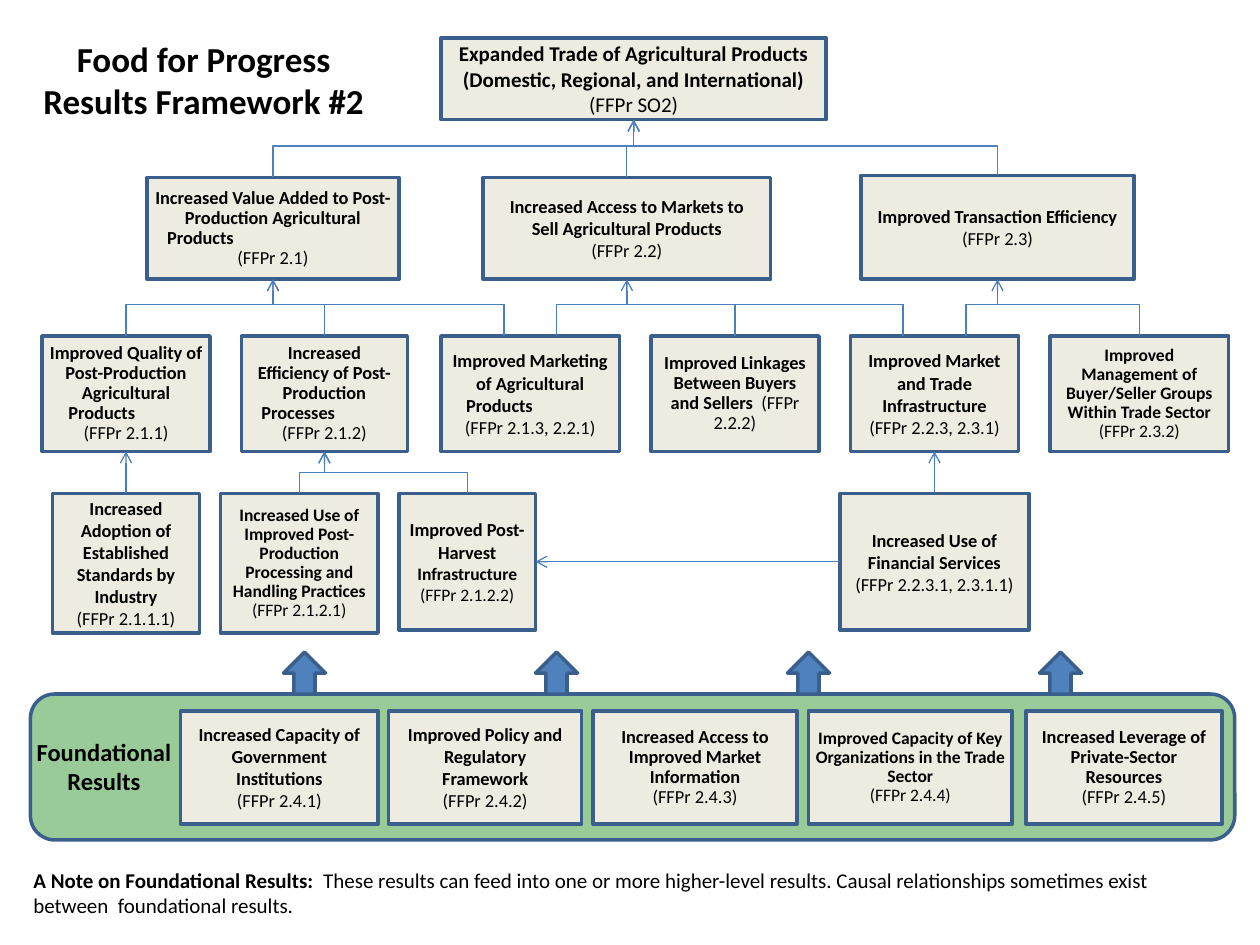
import pptx
import pptx.util
import pptx.dml.color
import pptx.enum.shapes
import pptx.enum.text
import pptx.oxml
import pptx.oxml.ns
from lxml import etree

RGBColor = pptx.dml.color.RGBColor
SHAPE = pptx.enum.shapes.MSO_SHAPE
CONNECTOR = pptx.enum.shapes.MSO_CONNECTOR
ALIGN = pptx.enum.text.PP_ALIGN
ANCHOR = pptx.enum.text.MSO_ANCHOR
qn = pptx.oxml.ns.qn

CREAM = RGBColor(0xEE, 0xEC, 0xE1)
EDGE = RGBColor(0x3A, 0x5F, 0x8C)
BLUE = RGBColor(0x4F, 0x81, 0xBD)
LINK = RGBColor(0x4B, 0x7E, 0xBC)
GREEN = RGBColor(0x33, 0x99, 0x33)
WHITE = RGBColor(0xFF, 0xFF, 0xFF)
BLACK = RGBColor(0, 0, 0)

CELLS_PER_INCH = 12
ROW_2, ROW_3, ROW_4, ROW_BASE = 16.9, 32, 47, 67.7
TOP_BUS, MIDDLE_BUS, LOWER_BUS = 13.9, 29, 45
WIDE, MEDIUM, SIDELESS, THIN = (0.1, 0.05), (0.05, 0.05), (0, 0.05), (0.01, 0.01)

# code: column, row, columns wide, rows high, title, size, line spacing, insets
BOXES = {
    "SO2": (42, 3.6, 36.7, 7.8, "Expanded Trade of Agricultural Products (Domestic, Regional, and International)", 12, 1, WIDE),
    "2.1": (14, ROW_2, 24, 9.7, "Increased Value Added to Post-Production Agricultural", 10.5, 0.9, MEDIUM),
    "2.2": (46, ROW_2, 27.4, 9.7, "Increased Access to Markets to Sell Agricultural Products", 10.5, 1, WIDE),
    "2.3": (82, 16.7, 26, 9.9, "Improved Transaction Efficiency", 10.5, 1, MEDIUM),
    "2.1.1": (4, ROW_3, 16, 11, "Improved Quality of Post-Production Agricultural", 10.5, 0.9, MEDIUM),
    "2.1.2": (23, ROW_3, 15.8, 11, "Increased Efficiency of Post-Production", 10.5, 0.9, WIDE),
    "2.1.3, 2.2.1": (42, ROW_3, 17, 11, "Improved Marketing of Agricultural", 10.5, 1, MEDIUM),
    "2.2.2": (62, ROW_3, 16, 11, "Improved Linkages Between Buyers and Sellers  ", 10.5, 0.9, WIDE),
    "2.2.3, 2.3.1": (81, ROW_3, 16, 11, "Improved Market and Trade Infrastructure", 10.5, 1, WIDE),
    "2.3.2": (100, ROW_3, 17, 11, "Improved Management of Buyer/Seller Groups Within Trade Sector", 10, 0.9, MEDIUM),
    "2.1.1.1": (5, ROW_4, 14, 13.3, "Increased Adoption of Established Standards by Industry", 10.5, 1, MEDIUM),
    "2.1.2.1": (21, ROW_4, 15, 13.3, "Increased Use of Improved Post-Production Processing and Handling Practices", 10, 0.9, THIN),
    "2.1.2.2": (38, ROW_4, 13, 13, "Improved Post-Harvest ", 10.5, 1, SIDELESS),
    "2.2.3.1, 2.3.1.1": (80, ROW_4, 18, 13, "Increased Use of Financial Services", 10.5, 1, MEDIUM),
    "2.4.1": (17.2, ROW_BASE, 18.8, 10.8, "Increased Capacity of Government Institutions", 10.5, 1, WIDE),
    "2.4.2": (37, ROW_BASE, 18.4, 10.8, "Improved Policy and Regulatory Framework", 10.5, 1, WIDE),
    "2.4.3": (56.5, ROW_BASE, 19.4, 10.8, "Increased Access to Improved Market Information", 10.5, 0.9, WIDE),
    "2.4.4": (77, ROW_BASE, 19.4, 10.8, "Improved Capacity of Key Organizations in the Trade Sector", 10, 0.9, SIDELESS),
    "2.4.5": (97.7, ROW_BASE, 18.7, 10.8, "Increased Leverage of Private-Sector Resources", 10.5, 0.9, WIDE),
}
LAST_WORDS = {
    "2.1": ("Products", 0.11),
    "2.1.1": ("Products", 0.16),
    "2.1.2": ("Processes", 0.06),
    "2.1.3, 2.2.1": ("Products", 0.15),
}
ELBOWS = [
    ("2.1", "SO2", TOP_BUS, BLUE), ("2.2", "SO2", TOP_BUS, BLUE), ("2.3", "SO2", TOP_BUS, BLUE),
    ("2.1.1", "2.1", MIDDLE_BUS, LINK), ("2.1.2", "2.1", MIDDLE_BUS, LINK),
    ("2.2.2", "2.2", MIDDLE_BUS, LINK), ("2.3.2", "2.3", MIDDLE_BUS, LINK),
    ("2.1.2.1", "2.1.2", LOWER_BUS, LINK), ("2.1.2.2", "2.1.2", LOWER_BUS, LINK),
]
BRANCHES = [(48, 30.9), (53, 59.7), (86, 70), (92, 95)]
STRAIGHTS = [
    ("2.1.1.1", 0, "2.1.1", 2),
    ("2.2.3.1, 2.3.1.1", 0, "2.2.3, 2.3.1", 2),
    ("2.2.3.1, 2.3.1.1", 1, "2.1.2.2", 3),
]


def grid(n):
    return pptx.util.Inches(n / CELLS_PER_INCH)


def add_run(p, text, size, bold=True):
    r = p.add_run()
    r.text = text
    r.font.name = "Calibri"
    r.font.size = pptx.util.Pt(size)
    r.font.bold = bold
    r.font.color.rgb = BLACK


def add_shape(s, kind, column, row, columns, rows, fill):
    sp = s.shapes.add_shape(kind, grid(column), grid(row), grid(columns), grid(rows))
    sp.shadow.inherit = False
    sp.fill.solid()
    sp.fill.fore_color.rgb = fill
    sp.line.color.rgb = EDGE
    sp.line.width = pptx.util.Pt(2)
    return sp


def add_box(s, code, column, row, columns, rows, title, size, spacing, insets):
    sp = add_shape(s, SHAPE.RECTANGLE, column, row, columns, rows, CREAM)
    tf = sp.text_frame
    tf.word_wrap = True
    tf.vertical_anchor = ANCHOR.MIDDLE
    tf.margin_left = tf.margin_right = pptx.util.Inches(insets[0])
    tf.margin_top = tf.margin_bottom = pptx.util.Inches(insets[1])
    p = tf.paragraphs[0]
    add_run(p, title, size)
    if code == "2.1.2.2":
        size = 10
        add_run(p, "Infrastructure", size)
    if code in LAST_WORDS:
        word, indent = LAST_WORDS[code]
        p = tf.add_paragraph()
        add_run(p, word, size)
        p._p.get_or_add_pPr().set("marL", str(pptx.util.Inches(indent)))
    if code != "2.2.2":
        p = tf.add_paragraph()
    add_run(p, f"(FFPr {code})", size, False)
    for p in tf.paragraphs:
        indented = p._p.get_or_add_pPr().get("marL")
        p.alignment = ALIGN.LEFT if indented else ALIGN.CENTER
        p.line_spacing = spacing
    return sp


def add_link(s, kind, x1, y1, x2, y2, color=LINK, arrow=False):
    cn = s.shapes.add_connector(kind, int(x1), int(y1), int(x2), int(y2))
    cn.line.color.rgb = color
    cn.line.width = pptx.util.Pt(0.75)
    etree.SubElement(cn._element.spPr, qn("a:effectLst"))
    if arrow:
        etree.SubElement(cn.line._get_or_add_ln(), qn("a:tailEnd"), type="arrow")
    return cn


def add_elbow(s, low, high, bus, color):
    x1, y1 = low.left + low.width / 2, low.top
    x2, y2 = high.left + high.width / 2, high.top + high.height
    cx, cy = (x1 + x2) / 2, (y1 + y2) / 2
    dx, dy = (x1 - x2) / 2, (y1 - y2) / 2
    cn = add_link(s, CONNECTOR.ELBOW, cx - dy, cy + dx, cx + dy, cy - dx, color, True)
    cn._element.spPr.find(qn("a:xfrm")).set("rot", str(270 * 60000))
    geometry = cn._element.spPr.find(qn("a:prstGeom"))
    share = round((y1 - grid(bus)) / (y1 - y2) * 100000)
    etree.SubElement(geometry.find(qn("a:avLst")), qn("a:gd"), name="adj1", fmla=f"val {share}")


def add_branch(s, column, target):
    x, bus = grid(column), grid(MIDDLE_BUS)
    add_link(s, CONNECTOR.STRAIGHT, x, grid(ROW_3), x, bus)
    add_link(s, CONNECTOR.STRAIGHT, x, bus, grid(target), bus)


def add_straight(s, start, start_side, end, end_side):
    cn = add_link(s, CONNECTOR.STRAIGHT, 0, 0, 0, 0, LINK, True)
    cn.begin_connect(start, start_side)
    cn.end_connect(end, end_side)


def add_panel(s):
    sp = add_shape(s, SHAPE.ROUNDED_RECTANGLE, 2.9, 66.1, 114.7, 13.9, GREEN)
    color = sp._element.spPr.find(qn("a:solidFill")).find(qn("a:srgbClr"))
    etree.SubElement(color, qn("a:alpha"), val="50000")


def write_lines(sp, lines, size):
    tf = sp.text_frame
    tf.word_wrap = False
    tf.vertical_anchor = ANCHOR.TOP
    for i, line in enumerate(lines):
        p = tf.add_paragraph() if i else tf.paragraphs[0]
        p.alignment = ALIGN.CENTER
        add_run(p, line, size)


def add_note(s):
    sp = s.shapes.add_textbox(grid(2), grid(82), grid(116), grid(6))
    sp.fill.solid()
    sp.fill.fore_color.rgb = WHITE
    sp.text_frame.word_wrap = True
    p = sp.text_frame.paragraphs[0]
    add_run(p, "A Note on Foundational Results:  ", 12)
    add_run(p, "These results can feed into one or more higher-level results. Causal relationships "
               "sometimes exist between  foundational results.", 12, False)


def main():
    prs = pptx.Presentation()
    prs.slide_width, prs.slide_height = grid(120), grid(90)
    s = prs.slides.add_slide(prs.slide_layouts[5])
    title = s.shapes.title
    title.left, title.top, title.width, title.height = grid(2.8), grid(3), grid(33.2), grid(9.2)
    write_lines(title, ["Food for Progress", "Results Framework #2"], 20)
    add_note(s)
    add_panel(s)
    boxes = {code: add_box(s, code, *spec) for code, spec in BOXES.items()}
    for i in range(4):
        add_shape(s, SHAPE.UP_ARROW, 27 + 24 * i, 62.1, 4, 4, BLUE)
    label = s.shapes.add_textbox(grid(2), grid(69.6), grid(15.8), grid(6.8))
    write_lines(label, ["Foundational", "Results"], 14)
    for low, high, bus, color in ELBOWS:
        add_elbow(s, boxes[low], boxes[high], bus, color)
    for column, target in BRANCHES:
        add_branch(s, column, target)
    for start, start_side, end, end_side in STRAIGHTS:
        add_straight(s, boxes[start], start_side, boxes[end], end_side)
    prs.save("out.pptx")


if __name__ == "__main__":
    main()
